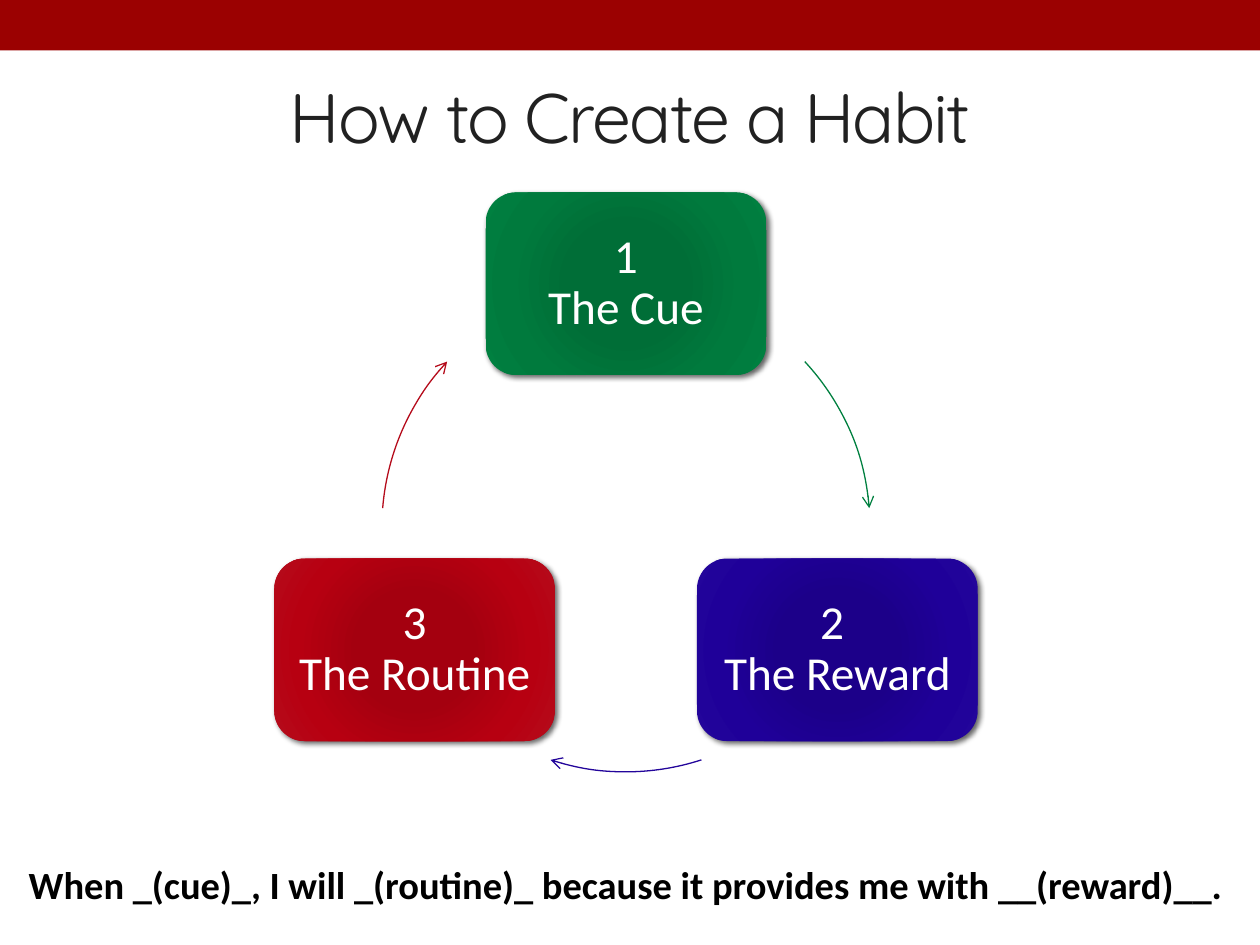
"""Build a slide showing the three-step habit cycle."""
from math import cos, radians, sin

from lxml import etree
from pptx import Presentation
from pptx import util as u
from pptx.dml.color import RGBColor
from pptx.enum import shapes, text
from pptx.oxml import parse_xml
from pptx.oxml.ns import nsdecls, qn

CENTER_X, CENTER_Y, RADIUS = 12.62, 10.64, 4.92
STEP_WIDTH, STEP_HEIGHT = 5.66, 3.68
STEPS = [
    ("1\vThe Cue", -90, ("006E37", "007A3D", "008040"), (-42.9, -4.6)),
    ("2 \vThe Reward", 30, ("1C0089", "1F0099", "23059B"), (72, 108)),
    ("3\vThe Routine ", 150, ("A4000F", "B70011", "B50B1B"), (184.6, 222.9)),
]


def color(value):
    """Turn a hex string into a colour."""
    return RGBColor.from_string(value)


def ring_offset(angle):
    """Return the offset in centimetres from the cycle's centre at an angle."""
    turn = radians(angle)
    return RADIUS * cos(turn), RADIUS * sin(turn)


def write(frame, words, font_name, size, hex_color, bold=False):
    """Put one centred paragraph into a text frame and return it."""
    frame.word_wrap = True
    frame.text = words
    paragraph = frame.paragraphs[0]
    paragraph.alignment = text.PP_ALIGN.CENTER
    font = paragraph.font
    font.name, font.size, font.bold = font_name, u.Pt(size), bold
    font.color.rgb = color(hex_color)
    return paragraph


def add_banner(slide):
    """Draw the band along the top edge."""
    banner = slide.shapes.add_shape(
        shapes.MSO_SHAPE.RECTANGLE, 0, 0, u.Cm(25.4), u.Cm(1.02))
    banner.shadow.inherit = False
    banner.fill.solid()
    banner.fill.fore_color.rgb = color("9B0101")
    banner.line.fill.background()


def add_title(slide, words):
    """Add the slide heading."""
    heading = slide.shapes.add_textbox(
        u.Cm(1.27), u.Cm(0.96), u.Cm(22.86), u.Cm(2.74))
    heading.text_frame.vertical_anchor = text.MSO_ANCHOR.MIDDLE
    paragraph = write(heading.text_frame, words, "Quicksand", 40, "212121")
    paragraph.runs[0]._r.get_or_add_rPr().set("spc", "-100")


def style_step(step, tones):
    """Give a step its circular gradient and soft shadow."""
    inner, middle, outer = tones
    stops = "".join(
        f'<a:gs pos="{place * 1000}"><a:srgbClr val="{tone}"/></a:gs>'
        for place, tone in ((0, inner), (34, inner), (70, middle), (100, outer)))
    gradient = parse_xml(
        f'<a:gradFill {nsdecls("a")} rotWithShape="1"><a:gsLst>{stops}</a:gsLst>'
        '<a:path path="circle"><a:fillToRect l="100000" t="100000" '
        'r="100000" b="100000"/></a:path></a:gradFill>')
    step.fill.gradient()
    step.line.fill.background()
    step.shadow.inherit = False
    properties = step._element.spPr
    properties.replace(properties.find(qn("a:gradFill")), gradient)
    properties.find(qn("a:effectLst")).append(parse_xml(
        f'<a:outerShdw {nsdecls("a")} blurRad="38100" dist="25400" dir="2700000" '
        'rotWithShape="0"><a:srgbClr val="000000"><a:alpha val="60000"/>'
        '</a:srgbClr></a:outerShdw>'))


def add_step(slide, label, angle, tones):
    """Add a rounded step centred on the cycle's circle."""
    across, down = ring_offset(angle)
    step = slide.shapes.add_shape(
        shapes.MSO_SHAPE.ROUNDED_RECTANGLE,
        u.Cm(CENTER_X + across - STEP_WIDTH / 2),
        u.Cm(CENTER_Y + down - STEP_HEIGHT / 2),
        u.Cm(STEP_WIDTH), u.Cm(STEP_HEIGHT))
    style_step(step, tones)
    frame = step.text_frame
    frame.vertical_anchor = text.MSO_ANCHOR.MIDDLE
    frame.margin_left = frame.margin_right = u.Cm(0.28)
    frame.margin_top = frame.margin_bottom = u.Cm(0.28)
    write(frame, label, "Calibri", 27, "FFFFFF").line_spacing = 0.9


def add_arc_arrow(slide, start, end, hex_color):
    """Draw a curved arrow in a frame that spans the whole circle."""
    left, top = u.Cm(CENTER_X - RADIUS), u.Cm(CENTER_Y - RADIUS)
    radius = u.Cm(RADIUS)
    side = 2 * radius
    builder = slide.shapes.build_freeform(left, top)
    builder.add_line_segments([(left + side, top + side)], close=False)
    arrow = builder.convert_to_shape()
    arrow.shadow.inherit = False
    arrow.fill.background()
    arrow.line.color.rgb = color(hex_color)
    arrow.line.width = u.Pt(0.75)
    properties = arrow._element.spPr
    etree.SubElement(properties.find(qn("a:ln")), qn("a:tailEnd"), type="arrow")
    x, y = (radius + u.Cm(offset) for offset in ring_offset(start))
    curve = parse_xml(
        f'<a:pathLst {nsdecls("a")}><a:path w="{side}" h="{side}">'
        f'<a:moveTo><a:pt x="{x}" y="{y}"/></a:moveTo>'
        f'<a:arcTo wR="{radius}" hR="{radius}" '
        f'stAng="{round(start % 360 * 60000)}" '
        f'swAng="{round((end - start) * 60000)}"/></a:path></a:pathLst>')
    geometry = properties.find(qn("a:custGeom"))
    geometry.replace(geometry.find(qn("a:pathLst")), curve)


def add_formula(slide, words):
    """Add the fill-in sentence at the bottom."""
    sentence = slide.shapes.add_textbox(0, u.Cm(17.24), u.Cm(25.4), u.Cm(2.13))
    write(sentence.text_frame, words, "Calibri", 22, "000000", bold=True)


def main():
    """Assemble and save the slide."""
    deck = Presentation()
    deck.slide_width, deck.slide_height = u.Cm(25.4), u.Cm(19.05)
    slide = deck.slides.add_slide(deck.slide_layouts[6])
    add_banner(slide)
    add_title(slide, "How to Create a Habit")
    for label, angle, tones, (start, end) in STEPS:
        add_step(slide, label, angle, tones)
        add_arc_arrow(slide, start, end, tones[-1])
    add_formula(slide, "When _(cue)_, I will _(routine)_ because it provides "
                       "me with __(reward)__. ")
    deck.save("out.pptx")


if __name__ == "__main__":
    main()
